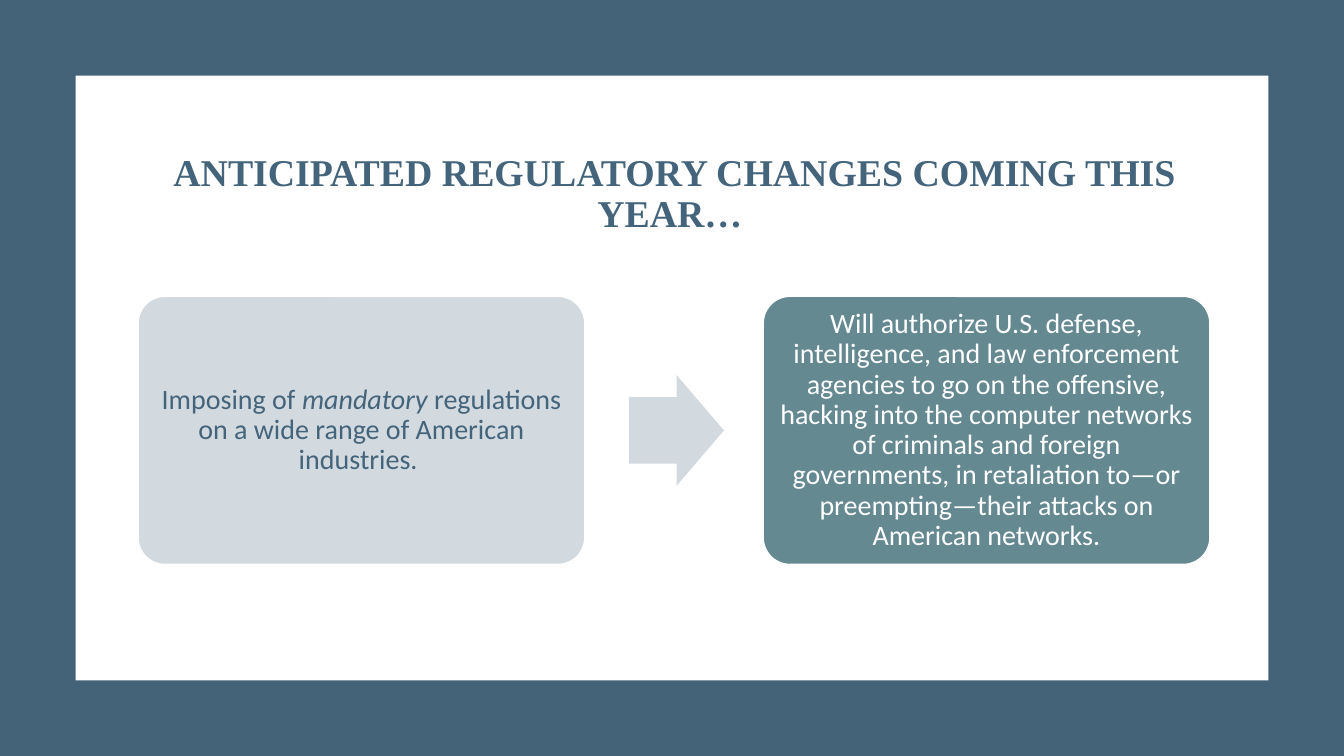
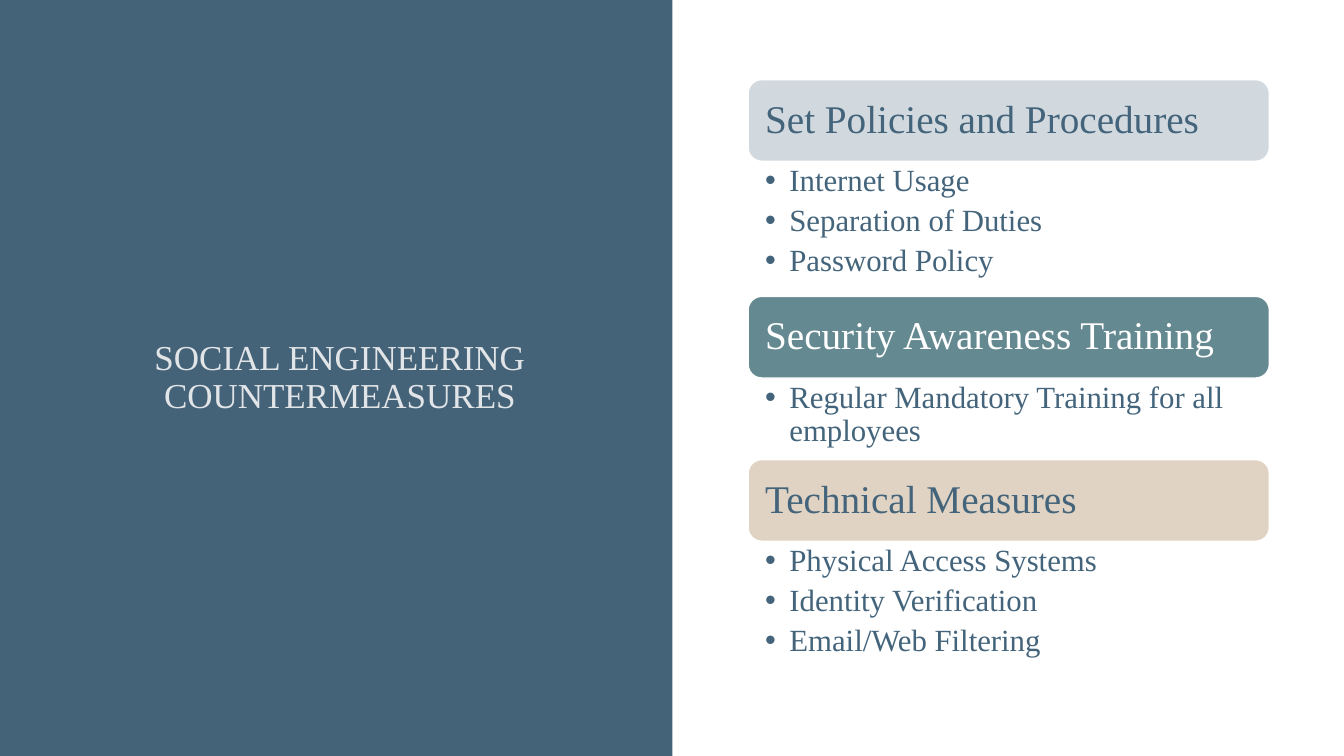
from lxml.etree import SubElement
from pptx import Presentation
from pptx.dml.color import RGBColor
from pptx.enum.shapes import MSO_SHAPE
from pptx.enum.text import MSO_ANCHOR, MSO_AUTO_SIZE, PP_ALIGN
from pptx.oxml.ns import qn
from pptx.util import Inches, Pt

COLORS = {
    "panel": "456378",
    "text": "43647B",
    "white": "FFFFFF",
    "title_light": "E2E5E8",
    "card": "D2D9DF",
    "heading": "D1D9DF",
    "teal": "648991",
    "sand": "E1D3C3",
}
SERIF, SANS = "Times New Roman", "Calibri"
WIDTH, HEIGHT = 13.33, 7.5
LINE_SPACING = 0.9


def rgb(name):
    """Return the named colour."""
    return RGBColor.from_string(COLORS[name])


def set_frame(tf, insets, anchor):
    """Set wrapping, insets (left, top, right, bottom) and anchor of a text frame."""
    left, top, right, bottom = map(Inches, insets)
    values = {
        "word_wrap": True,
        "auto_size": MSO_AUTO_SIZE.NONE,
        "vertical_anchor": anchor,
        "margin_left": left,
        "margin_top": top,
        "margin_right": right,
        "margin_bottom": bottom,
    }
    for key, value in values.items():
        setattr(tf, key, value)


def write(p, runs, color, align=PP_ALIGN.LEFT, **font):
    """Fill a paragraph with (text, italic) runs in one font."""
    p.alignment = align
    p.line_spacing = LINE_SPACING
    for text, italic in runs:
        r = p.add_run()
        r.text = text
        r.font.color.rgb = rgb(color)
        for key, value in {**font, "italic": italic}.items():
            setattr(r.font, key, value)


def add_block(s, kind, box, fill, line=None, adjustments=()):
    """Add a filled preset shape, with an optional outline."""
    sp = s.shapes.add_shape(kind, *map(Inches, box))
    sp.shadow.inherit = False
    sp.fill.solid()
    sp.fill.fore_color.rgb = rgb(fill)
    if line:
        sp.line.color.rgb = rgb(line)
        sp.line.width = Pt(1)
    else:
        sp.line.fill.background()
    for i, value in enumerate(adjustments):
        sp.adjustments[i] = value
    return sp


def add_slide(prs, panels, title, box, color, size, bold=False):
    """Add a slide with background panels and a centred title over them."""
    s = prs.slides.add_slide(prs.slide_layouts.get_by_name("Title Only"))
    for panel_box, fill in panels:
        add_block(s, MSO_SHAPE.RECTANGLE, panel_box, fill)
    sp = s.shapes.title
    sp.element.getparent().append(sp.element)
    sp.left, sp.top, sp.width, sp.height = map(Inches, box)
    set_frame(sp.text_frame, (0.1, 0.05, 0.1, 0.05), MSO_ANCHOR.MIDDLE)
    write(sp.text_frame.paragraphs[0], [(title, False)], color, PP_ALIGN.CENTER,
          name=SERIF, size=Pt(size), bold=bold)
    return s


def add_card(s, box, fill, runs, color):
    """Add a rounded card with centred text."""
    sp = add_block(s, MSO_SHAPE.ROUNDED_RECTANGLE, box, fill, "white", [0.1])
    set_frame(sp.text_frame, [0.08] * 4, MSO_ANCHOR.MIDDLE)
    write(sp.text_frame.paragraphs[0], runs, color, PP_ALIGN.CENTER,
          name=SANS, size=Pt(20))


def add_process(s, box, cards):
    """Add two cards at the ends of the box and an arrow between them."""
    x, y, w, h = box
    card_w, arrow_w, arrow_h, arrow_gap = 4.43, 0.94, 1.1, 0.44
    for left, card in zip((x, x + w - card_w), cards):
        add_card(s, (left, y, card_w, h), *card)
    arrow_box = (x + card_w + arrow_gap, y + (h - arrow_h) / 2, arrow_w, arrow_h)
    add_block(s, MSO_SHAPE.RIGHT_ARROW, arrow_box, "card", adjustments=[0.6, 0.5])


def add_bullet(p):
    """Give a paragraph a hanging bullet."""
    pPr = p._p.get_or_add_pPr()
    pPr.set("marL", str(Inches(0.25)))
    pPr.set("indent", str(Inches(-0.24)))
    color = SubElement(pPr, qn("a:buClr"))
    SubElement(color, qn("a:srgbClr"), val=COLORS["text"])
    SubElement(pPr, qn("a:buFont"), typeface="Arial")
    SubElement(pPr, qn("a:buChar"), char="•")


def add_section(s, box, heading_h, heading, fill, color, items):
    """Add a heading bar with a bulleted list under it."""
    x, y, w, h = box
    bar = add_block(s, MSO_SHAPE.ROUNDED_RECTANGLE, (x, y, w, heading_h), fill,
                    "white", [0.167])
    set_frame(bar.text_frame, [0.13] * 4, MSO_ANCHOR.MIDDLE)
    write(bar.text_frame.paragraphs[0], [(heading, False)], color,
          name=SERIF, size=Pt(28))
    list_box = (x, y + heading_h, w, h - heading_h)
    tf = s.shapes.add_textbox(*map(Inches, list_box)).text_frame
    set_frame(tf, (0.16, 0.04, 0.24, 0.04), MSO_ANCHOR.TOP)
    for i, item in enumerate(items):
        p = tf.add_paragraph() if i else tf.paragraphs[0]
        write(p, [(item, False)], "text", name=SERIF, size=Pt(22))
        p.space_before = Pt(4.8 if i else 0)
        add_bullet(p)


def add_sections(s, box, sections):
    """Stack heading and list sections down the box."""
    x, y, w = box
    heading_h = 0.81
    for list_h, *section in sections:
        add_section(s, (x, y, w, heading_h + list_h), heading_h, *section)
        y += heading_h + list_h


def build_changes(prs):
    """Build the framed slide on regulatory changes."""
    border = 0.75
    panels = [
        ((0, 0, WIDTH, HEIGHT), "panel"),
        ((border, border, WIDTH - 2 * border, HEIGHT - 2 * border), "white"),
    ]
    s = add_slide(prs, panels, "ANTICIPATED REGULATORY CHANGES COMING THIS YEAR… ",
                  (1.5, 1.44, 10.38, 0.98), "text", 27, True)
    add_process(s, (1.37, 2.94, 10.63, 2.66), [
        ("card", [("Imposing of ", False), ("mandatory", True),
                  (" regulations on a wide range of American industries. ", False)],
         "text"),
        ("teal", [("Will authorize U.S. defense, intelligence, and law enforcement "
                   "agencies to go on the offensive, hacking into the computer "
                   "networks of criminals and foreign governments, in retaliation "
                   "to—or preempting—their attacks on American networks.", False)],
         "white"),
    ])


def build_countermeasures(prs):
    """Build the split slide on countermeasures."""
    s = add_slide(prs, [((0, 0, 6.67, HEIGHT), "panel")],
                  "SOCIAL ENGINEERING COUNTERMEASURES",
                  (1.11, 0.75, 4.52, 6), "title_light", 25)
    add_sections(s, (7.42, 0.79, 5.17), [
        (1.34, "Set Policies and Procedures", "heading", "text",
         ["Internet Usage", "Separation of Duties", "Password Policy"]),
        (0.81, "Security Awareness Training", "teal", "white",
         ["Regular Mandatory Training for all employees"]),
        (1.34, "Technical Measures", "sand", "text",
         ["Physical Access Systems", "Identity Verification", "Email/Web Filtering"]),
    ])


def main():
    """Build and save the presentation."""
    prs = Presentation()
    prs.slide_width, prs.slide_height = Inches(WIDTH), Inches(HEIGHT)
    build_changes(prs)
    build_countermeasures(prs)
    prs.save("out.pptx")


if __name__ == "__main__":
    main()
